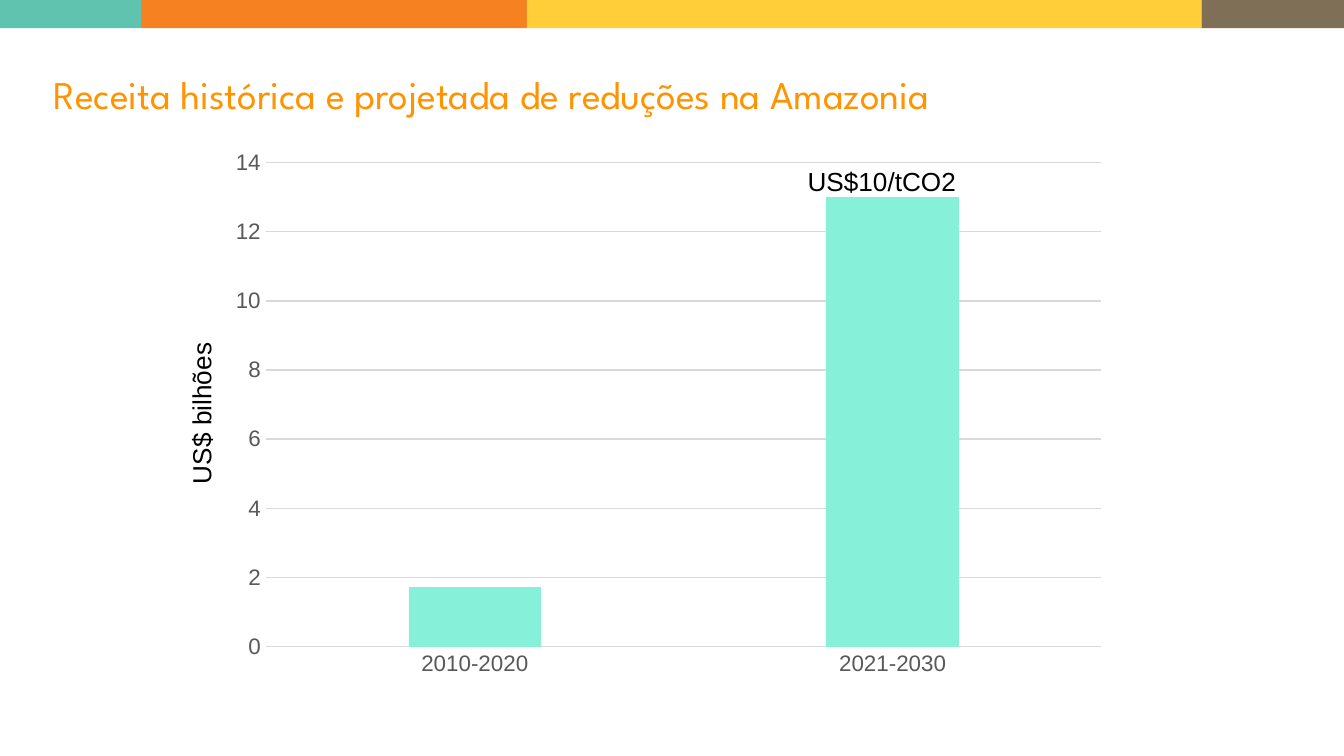
from dataclasses import dataclass
from itertools import pairwise

from pptx import Presentation
from pptx.chart.data import CategoryChartData
from pptx.dml.color import RGBColor
from pptx.enum.chart import XL_CHART_TYPE, XL_TICK_MARK
from pptx.enum.shapes import MSO_SHAPE
from pptx.enum.text import MSO_ANCHOR, MSO_AUTO_SIZE
from pptx.util import Inches, Pt

COLUMNS = XL_CHART_TYPE.COLUMN_CLUSTERED
NO_TICK = XL_TICK_MARK.NONE
RECTANGLE = MSO_SHAPE.RECTANGLE
TOP = MSO_ANCHOR.TOP
FIT_SHAPE = MSO_AUTO_SIZE.SHAPE_TO_FIT_TEXT
NO_FIT = MSO_AUTO_SIZE.NONE

WIDTH = 10
HEIGHT = WIDTH * 9 / 16
STRIP_TOP, STRIP_HEIGHT = -0.02, 0.23
STRIP_EDGES = (0, 0.105, 0.392, 0.894, 1)


@dataclass(frozen=True)
class Theme:
    heading_font: str = "League Spartan"
    body_font: str = "Arial"
    heading_size: float = 21
    label_size: float = 14
    axis_size: float = 12
    chart_size: float = 10
    hairline: float = 0.75
    heading: str = "FF9300"
    label: str = "000000"
    axis: str = "595959"
    grid: str = "D9D9D9"
    column: str = "86F0D9"
    strip: tuple = ("60C3AF", "F58121", "FFCE38", "7F6F57")


THEME = Theme()


def rgb(code):
    return RGBColor.from_string(code)


def set_font(font, name, size, color):
    font.name = name
    font.size = Pt(size)
    font.color.rgb = rgb(color)


def set_line(line, color):
    line.color.rgb = rgb(color)
    line.width = Pt(THEME.hairline)


def add_heading(slide, text):
    box = slide.shapes.add_textbox(
        Inches(0.4), Inches(0.52), Inches(8.62), Inches(0.52))
    frame = box.text_frame
    frame.word_wrap = True
    frame.auto_size = NO_FIT
    frame.vertical_anchor = TOP
    frame.margin_left = frame.margin_right = 0
    frame.margin_top = frame.margin_bottom = 0
    frame.text = text
    set_font(frame.paragraphs[0].font, THEME.heading_font,
             THEME.heading_size, THEME.heading)


def add_label(slide, text, left, top, width, rotation=0):
    box = slide.shapes.add_textbox(
        Inches(left), Inches(top), Inches(width), Inches(0.34))
    box.rotation = rotation
    frame = box.text_frame
    frame.word_wrap = False
    frame.auto_size = FIT_SHAPE
    frame.text = text
    set_font(frame.paragraphs[0].font, THEME.body_font,
             THEME.label_size, THEME.label)


def style_axis(axis):
    axis.major_tick_mark = axis.minor_tick_mark = NO_TICK
    set_font(axis.tick_labels.font, THEME.body_font,
             THEME.axis_size, THEME.axis)


def add_revenue_chart(slide, revenue):
    data = CategoryChartData()
    data.categories = list(revenue)
    data.add_series("Series 1", list(revenue.values()))
    chart = slide.shapes.add_chart(
        COLUMNS, Inches(1.62), Inches(1.04), Inches(6.71), Inches(4.07),
        data).chart
    chart.has_legend = False
    chart.has_title = False
    set_font(chart.font, THEME.body_font, THEME.chart_size, THEME.label)

    periods, billions = chart.category_axis, chart.value_axis
    style_axis(periods)
    style_axis(billions)
    set_line(periods.format.line, THEME.grid)
    billions.format.line.fill.background()
    billions.minimum_scale, billions.maximum_scale = 0, 14
    billions.major_unit = 2
    billions.has_major_gridlines = True
    set_line(billions.major_gridlines.format.line, THEME.grid)

    plot = chart.plots[0]
    plot.gap_width = 219
    plot.overlap = -27
    plot.vary_by_categories = False
    columns = plot.series[0]
    columns.format.fill.solid()
    columns.format.fill.fore_color.rgb = rgb(THEME.column)
    set_line(columns.format.line, THEME.column)


def add_color_strip(slide):
    for (start, end), color in zip(pairwise(STRIP_EDGES), THEME.strip):
        band = slide.shapes.add_shape(
            RECTANGLE, Inches(start * WIDTH), Inches(STRIP_TOP),
            Inches((end - start) * WIDTH), Inches(STRIP_HEIGHT))
        band.shadow.inherit = False
        band.fill.solid()
        band.fill.fore_color.rgb = rgb(color)
        band.line.fill.background()


def main():
    deck = Presentation()
    deck.slide_width, deck.slide_height = Inches(WIDTH), Inches(HEIGHT)
    slide = deck.slides.add_slide(deck.slide_layouts[6])
    add_heading(slide, "Receita histórica e projetada de reduções na Amazonia")
    add_revenue_chart(slide, {"2010-2020": 1.7, "2021-2030": 13})
    add_label(slide, "US$ bilhões", 0.87, 2.9, 1.26, rotation=270)
    add_label(slide, "US$10/tCO2", 5.91, 1.18, 1.31)
    add_color_strip(slide)
    deck.save("out.pptx")


if __name__ == "__main__":
    main()
